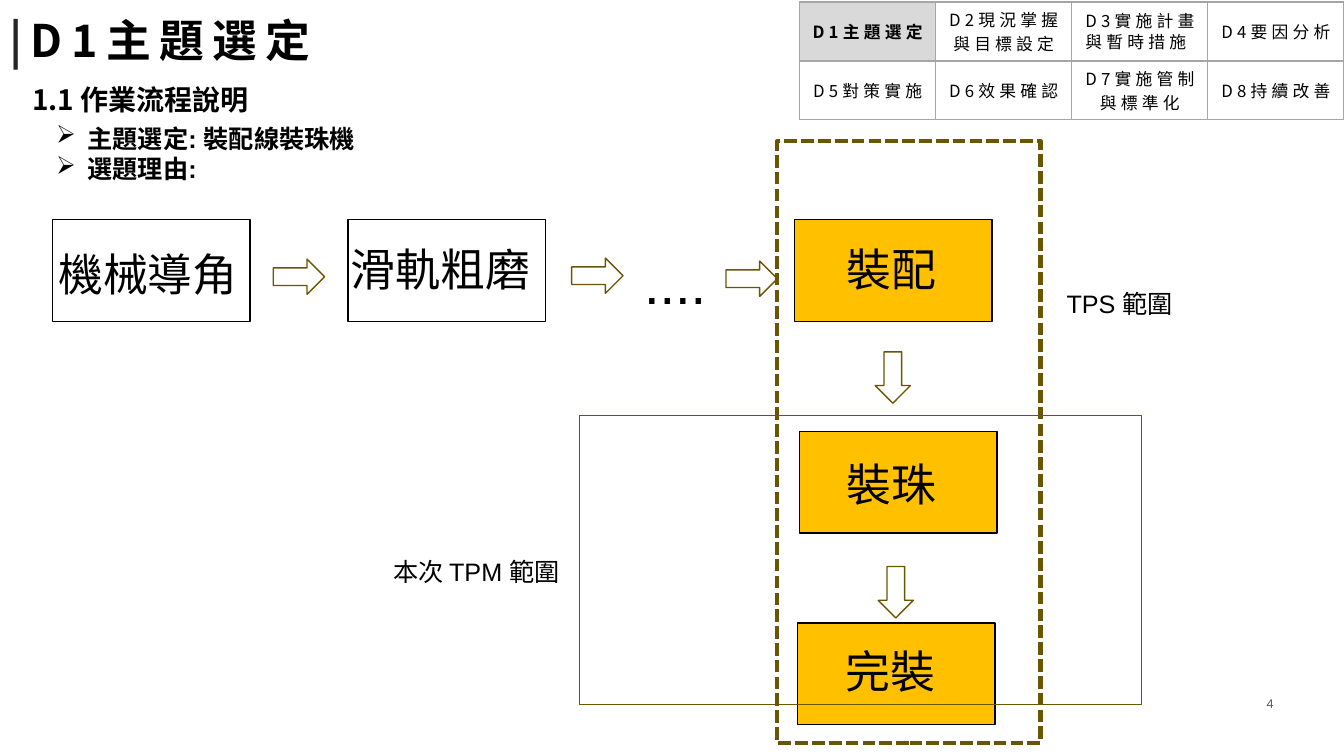
from dataclasses import dataclass

from lxml.etree import SubElement
from pptx import Presentation
from pptx.dml.color import RGBColor
from pptx.enum.dml import MSO_LINE
from pptx.enum.shapes import MSO_SHAPE
from pptx.enum.text import MSO_ANCHOR, PP_ALIGN
from pptx.oxml.ns import qn
from pptx.util import Inches, Pt


@dataclass(frozen=True)
class Theme:
    black: str = "000000"
    bar: str = "262626"
    muted: str = "595959"
    olive: str = "6A5600"
    amber: str = "FFC000"
    white: str = "FFFFFF"
    active: str = "D9D9D9"
    grid: str = "A6A6A6"
    cjk: str = "Noto Sans CJK SC"
    latin: str = "Arial"
    title: int = 32
    step: int = 32
    dots: int = 40
    heading: int = 20
    body: int = 18
    tracker: int = 12
    page: int = 9


THEME = Theme()


def rgb(value):
    return RGBColor.from_string(value)


def style(paragraph, size, face, color=THEME.black, bold=False, spacing=0):
    font = paragraph.font
    font.size, font.name, font.bold = Pt(size), face, bold
    font.color.rgb = rgb(color)
    properties = paragraph._p.pPr.find(qn("a:defRPr"))
    if spacing:
        properties.set("spc", str(spacing * 100))
    east_asian = SubElement(properties, qn("a:ea"))
    east_asian.set("typeface", THEME.cjk)


def add_label(slide, box, lines, size, face=THEME.latin, color=THEME.black,
              bold=False, wrap=False, align=PP_ALIGN.LEFT, bullet=None):
    frame = slide.shapes.add_textbox(*map(Inches, box)).text_frame
    frame.word_wrap = wrap
    frame.text = "\n".join(lines)
    for paragraph in frame.paragraphs:
        paragraph.alignment = align
        if bullet:
            properties = paragraph._p.get_or_add_pPr()
            properties.set("marL", str(Inches(0.31)))
            properties.set("indent", str(Inches(-0.31)))
            SubElement(properties, qn("a:buChar")).set("char", bullet)
        style(paragraph, size, face, color, bold)


def add_block(slide, kind, box, line, fill=None, width=1):
    block = slide.shapes.add_shape(kind, *map(Inches, box))
    block.shadow.inherit = False
    if fill:
        block.fill.solid()
        block.fill.fore_color.rgb = rgb(fill)
    else:
        block.fill.background()
    block.line.color.rgb = rgb(line)
    block.line.width = Pt(width)
    return block


def add_title(slide, box):
    title = slide.shapes.title
    title.left, title.top, title.width, title.height = map(Inches, box)
    frame = title.text_frame
    frame.vertical_anchor = MSO_ANCHOR.MIDDLE
    frame.margin_left = frame.margin_right = Inches(0.07)
    frame.margin_top = frame.margin_bottom = Inches(0.04)
    heading = frame.paragraphs[0]
    heading.alignment = PP_ALIGN.LEFT
    heading.space_after = Pt(18)
    for text, color in (("|", THEME.bar), ("D1主題選定", THEME.black)):
        run = heading.add_run()
        run.text = text
        run.font.color.rgb = rgb(color)
    style(heading, THEME.title, THEME.cjk, bold=True, spacing=6)


def add_cell_borders(cell):
    properties = cell._tc.get_or_add_tcPr()
    for position, side in enumerate(("lnL", "lnR", "lnT", "lnB")):
        border = properties.makeelement(qn(f"a:{side}"), {"w": str(Pt(1))})
        properties.insert(position, border)
        fill = SubElement(border, qn("a:solidFill"))
        SubElement(fill, qn("a:srgbClr")).set("val", THEME.grid)


def add_tracker(slide, box):
    stages = (
        ("D1主題選定", "D2現況掌握\n與目標設定", "D3實施計畫\n與暫時措施 ", "D4要因分析"),
        ("D5對策實施", "D6效果確認", "D7實施管制\n與標準化", "D8持續改善"),
    )
    tracker = slide.shapes.add_table(2, 4, *map(Inches, box)).table
    tracker.first_row = tracker.horz_banding = False
    for row, names in enumerate(stages):
        for column, name in enumerate(names):
            current = row == column == 0
            cell = tracker.cell(row, column)
            cell.text = name
            cell.vertical_anchor = MSO_ANCHOR.MIDDLE
            cell.fill.solid()
            cell.fill.fore_color.rgb = rgb(THEME.active if current else THEME.white)
            add_cell_borders(cell)
            for paragraph in cell.text_frame.paragraphs:
                paragraph.alignment = PP_ALIGN.CENTER
                if name.startswith("D3"):
                    paragraph.line_spacing = 0.85
                style(paragraph, THEME.tracker, THEME.cjk, bold=current, spacing=3)


def add_topic(slide, box):
    left, top, width, height = box
    add_label(slide, (left + 0.24, top + 0.4, width, 1.01),
              ("主題選定: 裝配線裝珠機", "選題理由:"),
              THEME.body, bold=True, wrap=True, bullet="➢")
    add_label(slide, (left, top, width, height), ("1.1 作業流程說明",),
              THEME.heading, THEME.cjk, bold=True, wrap=True)


def add_flow(slide, box):
    left, top, step_width, step_height = box
    steps = (
        ("機械導角", 0, 0, None, -0.04, 0.22, 2),
        ("滑軌粗磨", 2.93, 0, None, -0.07, 0.17, 2),
        ("裝配", 7.36, 0, THEME.amber, 0.42, 0.17, 1.1),
        ("裝珠", 7.41, 2.1, THEME.amber, 0.37, 0.2, 1.1),
        ("完裝", 7.39, 4, THEME.amber, 0.38, 0.16, 1.1),
    )
    for name, dx, dy, fill, text_dx, text_dy, text_width in steps:
        x, y = left + dx, top + dy
        add_block(slide, MSO_SHAPE.RECTANGLE, (x, y, step_width, step_height),
                  THEME.black, fill)
        add_label(slide, (x + text_dx, y + text_dy, text_width, 0.64),
                  (name,), THEME.step)
    arrows = ((2.19, 0.39, 0), (5.15, 0.38, 0), (6.68, 0.41, 0),
              (8.08, 1.39, 90), (8.11, 3.52, 90))
    for dx, dy, turn in arrows:
        arrow = add_block(slide, MSO_SHAPE.RIGHT_ARROW,
                          (left + dx, top + dy, 0.51, 0.35), THEME.olive)
        arrow.rotation = turn
    add_label(slide, (left + 5.77, top + 0.24, 0.83, 0.77), ("....",), THEME.dots)


def add_tps_scope(slide, box):
    left, top, width, height = box
    scope = add_block(slide, MSO_SHAPE.RECTANGLE, box, THEME.olive, width=3)
    scope.line.dash_style = MSO_LINE.SQUARE_DOT
    add_label(slide, (left + width + 0.16, top + 1.41, 1.34, 0.4),
              ("TPS 範圍",), THEME.body)


def add_tpm_scope(slide, box):
    left, top, width, height = box
    add_block(slide, MSO_SHAPE.RECTANGLE, box, THEME.olive)
    add_label(slide, (left - 1.95, top + 1.35, 1.95, 0.4),
              ("本次 TPM 範圍",), THEME.body, wrap=True)


def main():
    deck = Presentation()
    deck.slide_width, deck.slide_height = Inches(13.33), Inches(7.5)
    slide = deck.slides.add_slide(deck.slide_layouts[5])
    add_label(slide, (12.02, 6.85, 0.71, 0.31), ("4",), THEME.page,
              color=THEME.muted, wrap=True, align=PP_ALIGN.RIGHT)
    add_title(slide, (0.02, 0.02, 7.91, 0.75))
    add_tracker(slide, (7.93, 0.02, 5.4, 1.17))
    add_topic(slide, (0.22, 0.77, 4, 0.44))
    add_flow(slide, (0.52, 2.18, 1.96, 1.01))
    add_tps_scope(slide, (7.71, 1.4, 2.61, 5.97))
    add_tpm_scope(slide, (5.75, 4.12, 5.57, 2.87))
    deck.save("out.pptx")


if __name__ == "__main__":
    main()
